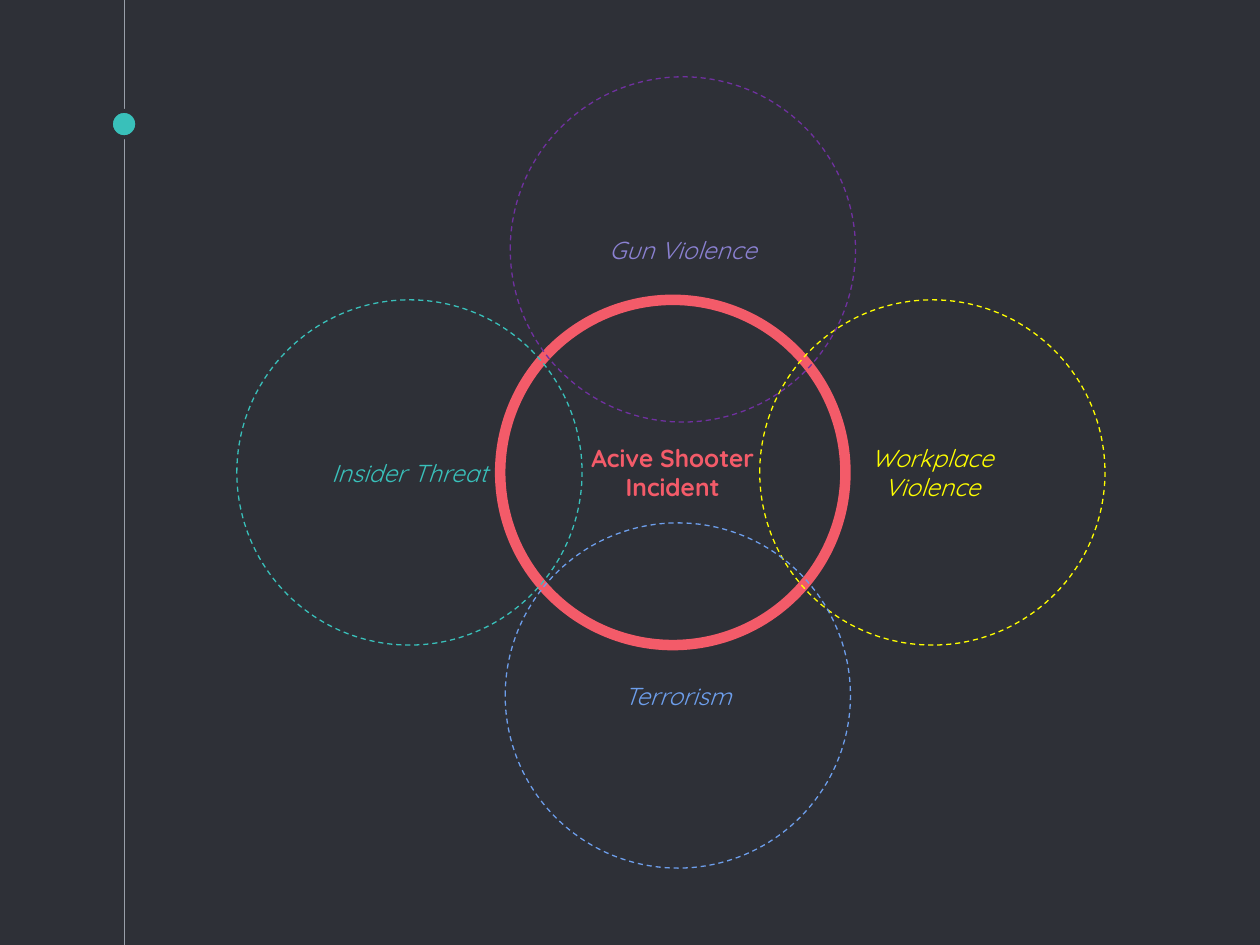
"""Build a slide of four overlapping threat circles around an active shooter incident."""
import pptx
import pptx.dml.color
import pptx.enum.dml
import pptx.enum.shapes
import pptx.enum.text
import pptx.oxml.ns
import pptx.util
from lxml import etree
from pptx.util import Inches


def rgb(value):
    return pptx.dml.color.RGBColor.from_string(value)


def add_circle(left, top, size, line_color, line_width):
    circle = slide.shapes.add_shape(
        pptx.enum.shapes.MSO_SHAPE.OVAL,
        Inches(left), Inches(top), Inches(size), Inches(size))
    circle.shadow.inherit = False
    circle.line.color.rgb = rgb(line_color)
    circle.line.width = pptx.util.Pt(line_width)
    return circle


deck = pptx.Presentation()
deck.slide_width = Inches(10)
deck.slide_height = Inches(7.5)
slide = deck.slides.add_slide(deck.slide_layouts[6])
slide.background.fill.solid()
slide.background.fill.fore_color.rgb = rgb("2E3037")

timeline = slide.shapes.add_connector(
    pptx.enum.shapes.MSO_CONNECTOR.STRAIGHT,
    Inches(0.99), Inches(0), Inches(0.99), Inches(7.5))
timeline.line.color.rgb = rgb("999FA9")
timeline.line.width = pptx.util.Pt(0.75)
etree.SubElement(timeline._element.spPr, pptx.oxml.ns.qn("a:effectLst"))

marker = add_circle(0.88, 0.88, 0.21, "2E3037", 2.25)
marker.fill.solid()
marker.fill.fore_color.rgb = rgb("39C0BA")

topics = [
    ("Acive Shooter Incident", 3.97, 2.38, "F35B69", "F35B69", True),
    ("Insider Threat", 1.88, 2.38, "39C0BA", "39C0BA", False),
    ("Workplace Violence", 6.03, 2.38, "FFFF00", "FFFF00", False),
    ("Terrorism", 4.01, 4.15, "6D9EEB", "6D9EEB", False),
    ("Gun Violence", 4.05, 0.61, "7030A0", "8B81D2", False),
]
for label, left, top, outline, text_color, is_center in topics:
    topic = add_circle(left, top, 2.74, outline, 6 if is_center else 0.75)
    topic.fill.background()
    if not is_center:
        topic.line.dash_style = pptx.enum.dml.MSO_LINE.DASH

    frame = topic.text_frame
    frame.word_wrap = True
    frame.vertical_anchor = pptx.enum.text.MSO_ANCHOR.MIDDLE
    frame.margin_left = frame.margin_right = Inches(0.1)
    frame.margin_top = frame.margin_bottom = Inches(0.1)
    paragraph = frame.paragraphs[0]
    paragraph.alignment = pptx.enum.text.PP_ALIGN.CENTER
    run = paragraph.add_run()
    run.text = label
    run.font.name = "Quicksand"
    run.font.size = pptx.util.Pt(14)
    run.font.bold = is_center
    run.font.italic = not is_center
    run.font.color.rgb = rgb(text_color)

deck.save("out.pptx")
